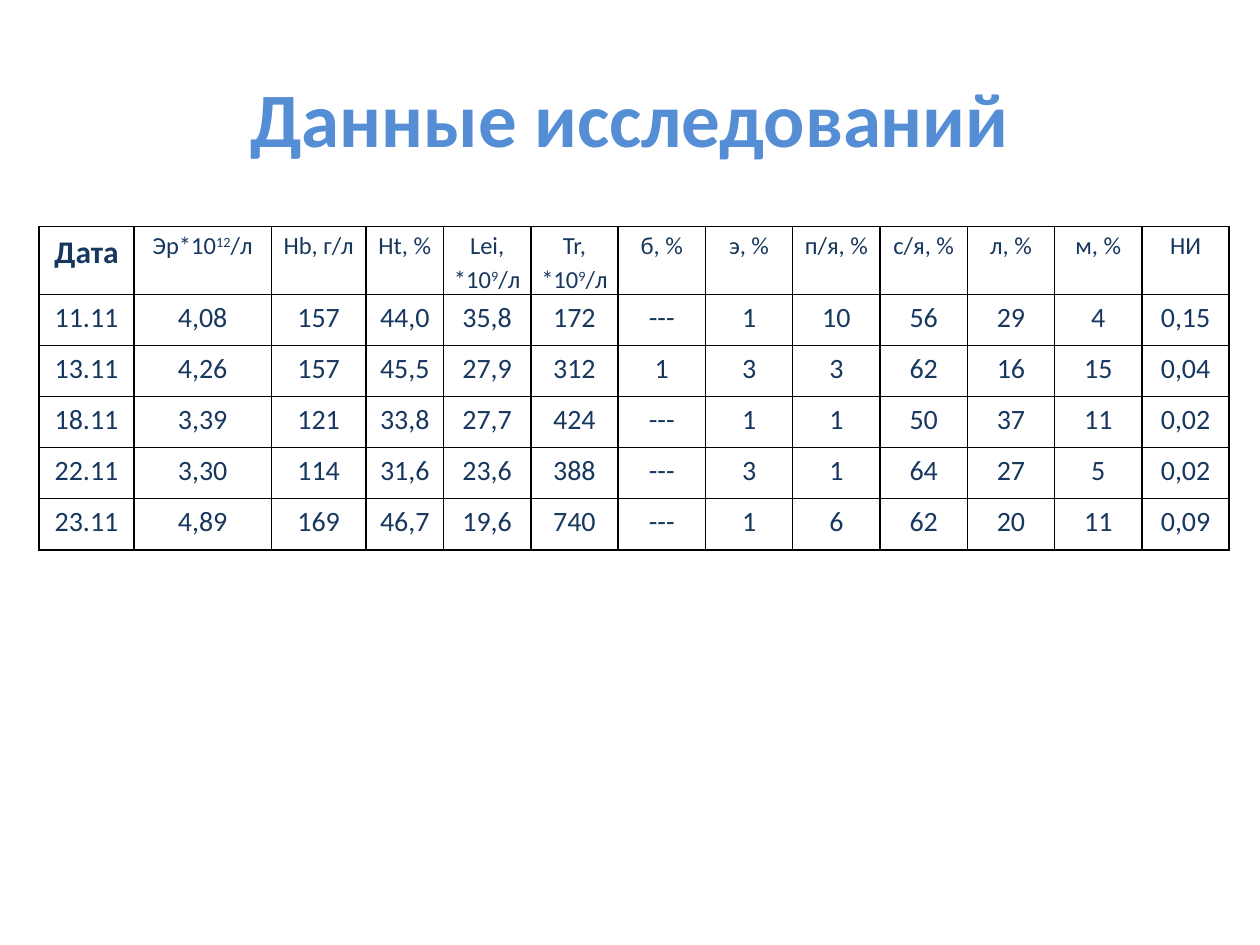
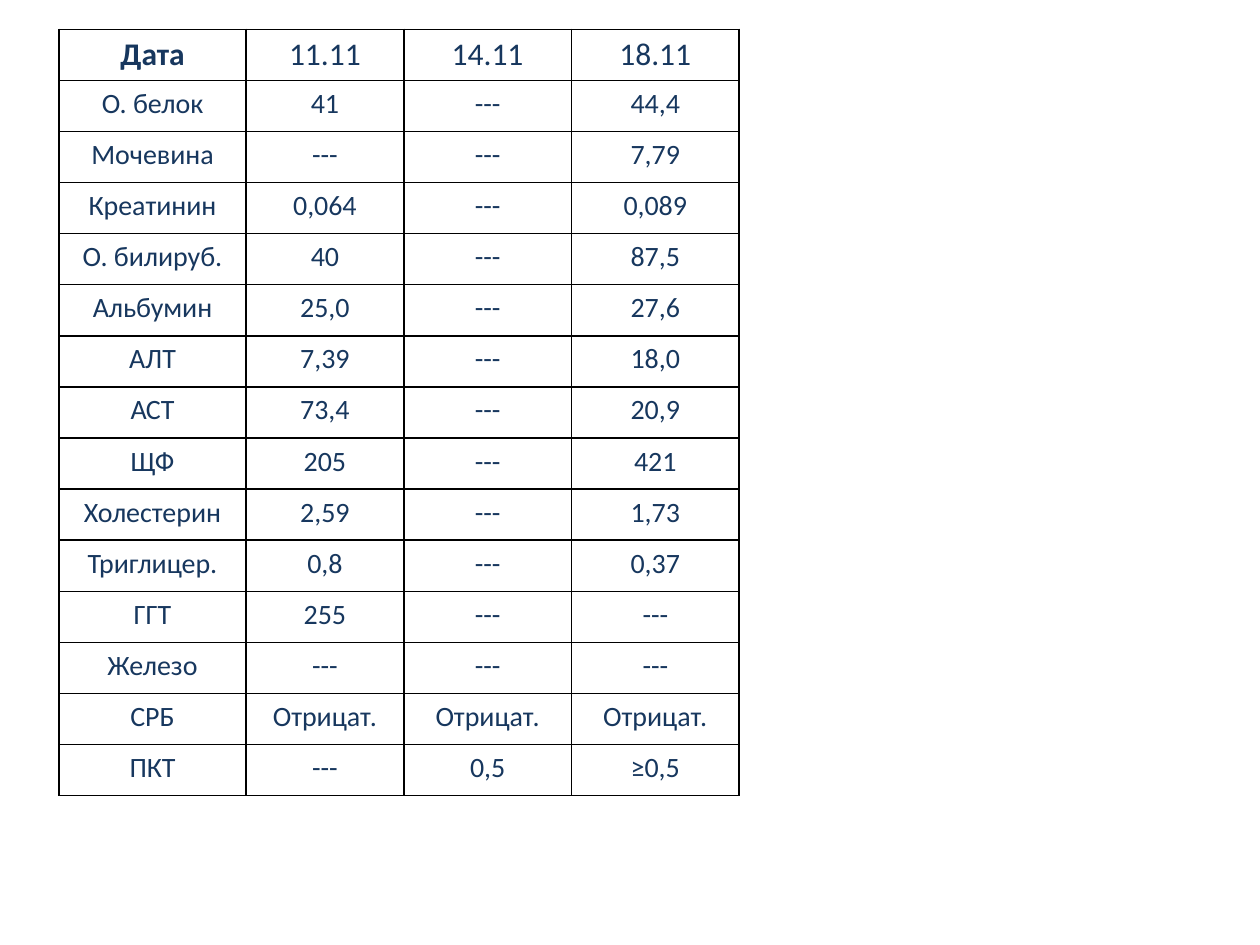
"""Build two slides of laboratory results: blood counts and biochemistry."""

from dataclasses import dataclass

from lxml.etree import SubElement
from pptx import Presentation
from pptx.dml.color import RGBColor
from pptx.enum.text import MSO_ANCHOR, PP_ALIGN
from pptx.oxml.ns import qn
from pptx.util import Cm, Pt


@dataclass(frozen=True)
class Theme:
    font: str = "Calibri"
    title_color: RGBColor = RGBColor(0x55, 0x8E, 0xD5)
    text_color: RGBColor = RGBColor(0x17, 0x37, 0x5E)
    border_color: str = "000000"
    border_width: int = Pt(1)
    title_size: int = Pt(44)
    header_size: int = Pt(18)
    body_size: int = Pt(16)
    unit_size: int = Pt(14)


theme = Theme()


def style_paragraph(paragraph, size, color, bold=False):
    paragraph.alignment = PP_ALIGN.CENTER
    paragraph.font.name = theme.font
    paragraph.font.size = size
    paragraph.font.bold = bold
    paragraph.font.color.rgb = color


def add_grid(slide, left, top, column_widths, row_height, rows, header_size):
    table = slide.shapes.add_table(
        len(rows), len(column_widths), left, top,
        sum(column_widths), row_height * len(rows),
    ).table
    table.first_row = False
    table.horz_banding = False
    for column, width in zip(table.columns, column_widths):
        column.width = width
    for row_index, values in enumerate(rows):
        table.rows[row_index].height = row_height
        for column_index, value in enumerate(values):
            cell = table.cell(row_index, column_index)
            properties = cell._tc.get_or_add_tcPr()
            for side in ("a:lnL", "a:lnR", "a:lnT", "a:lnB"):
                line = SubElement(properties, qn(side), w=str(theme.border_width))
                fill = SubElement(line, qn("a:solidFill"))
                SubElement(fill, qn("a:srgbClr"), val=theme.border_color)
            cell.fill.background()

            paragraph = cell.text_frame.paragraphs[0]
            for part_index, part in enumerate(value.split("^")):
                run = paragraph.add_run()
                run.text = part
                if part_index % 2:
                    run._r.get_or_add_rPr().set("baseline", "30000")

            is_corner = row_index == column_index == 0
            size = theme.body_size if row_index else header_size
            if is_corner:
                size = theme.header_size
            style_paragraph(paragraph, size, theme.text_color, is_corner)
            if size == theme.unit_size:
                paragraph.line_spacing = 1.15
                cell.margin_left = cell.margin_right = Cm(0.18)
                cell.margin_top = cell.margin_bottom = 0


presentation = Presentation()
presentation.slide_width = Cm(25.4)
presentation.slide_height = Cm(19.05)
blank_layout = presentation.slide_layouts[6]
row_height = Cm(1.03)

blood_slide = presentation.slides.add_slide(blank_layout)
title = blood_slide.shapes.add_textbox(Cm(1.27), Cm(0.76), Cm(22.86), Cm(3.18))
title.text_frame.word_wrap = True
title.text_frame.vertical_anchor = MSO_ANCHOR.MIDDLE
title_paragraph = title.text_frame.paragraphs[0]
title_paragraph.text = "Данные исследований"
style_paragraph(title_paragraph, theme.title_size, theme.title_color, True)

blood_rows = [
    ("Дата", "Эр*10^12^/л", "Hb, г/л", "Ht, %", "Lei, *10^9^/л", "Tr, *10^9^/л",
     "б, %", "э, %", "п/я, %", "с/я, %", "л, %", "м, %", "НИ"),
    ("11.11", "4,08", "157", "44,0", "35,8", "172",
     "---", "1", "10", "56", "29", "4", "0,15"),
    ("13.11", "4,26", "157", "45,5", "27,9", "312",
     "1", "3", "3", "62", "16", "15", "0,04"),
    ("18.11", "3,39", "121", "33,8", "27,7", "424",
     "---", "1", "1", "50", "37", "11", "0,02"),
    ("22.11", "3,30", "114", "31,6", "23,6", "388",
     "---", "3", "1", "64", "27", "5", "0,02"),
    ("23.11", "4,89", "169", "46,7", "19,6", "740",
     "---", "1", "6", "62", "20", "11", "0,09"),
]
blood_widths = [Cm(1.91), Cm(2.77), Cm(1.91), Cm(1.56)] + [Cm(1.76)] * 9
add_grid(blood_slide, Cm(0.79), Cm(4.57), blood_widths, row_height,
         blood_rows, theme.unit_size)

biochemistry_slide = presentation.slides.add_slide(blank_layout)
biochemistry_rows = [
    ("Дата", "11.11", "14.11", "18.11"),
    ("О. белок", "41", "---", "44,4"),
    ("Мочевина", "---", "---", "7,79"),
    ("Креатинин", "0,064", "---", "0,089"),
    ("О. билируб.", "40", "---", "87,5"),
    ("Альбумин", "25,0", "---", "27,6"),
    ("АЛТ", "7,39", "---", "18,0"),
    ("АСТ", "73,4", "---", "20,9"),
    ("ЩФ", "205", "---", "421"),
    ("Холестерин", "2,59", "---", "1,73"),
    ("Триглицер.", "0,8", "---", "0,37"),
    ("ГГТ", "255", "---", "---"),
    ("Железо", "---", "---", "---"),
    ("СРБ", "Отрицат.", "Отрицат.", "Отрицат."),
    ("ПКТ", "---", "0,5", "≥0,5"),
]
biochemistry_widths = [Cm(3.77), Cm(3.18), Cm(3.38), Cm(3.38)]
add_grid(biochemistry_slide, Cm(1.19), Cm(0.59), biochemistry_widths, row_height,
         biochemistry_rows, theme.header_size)

presentation.save("out.pptx")
